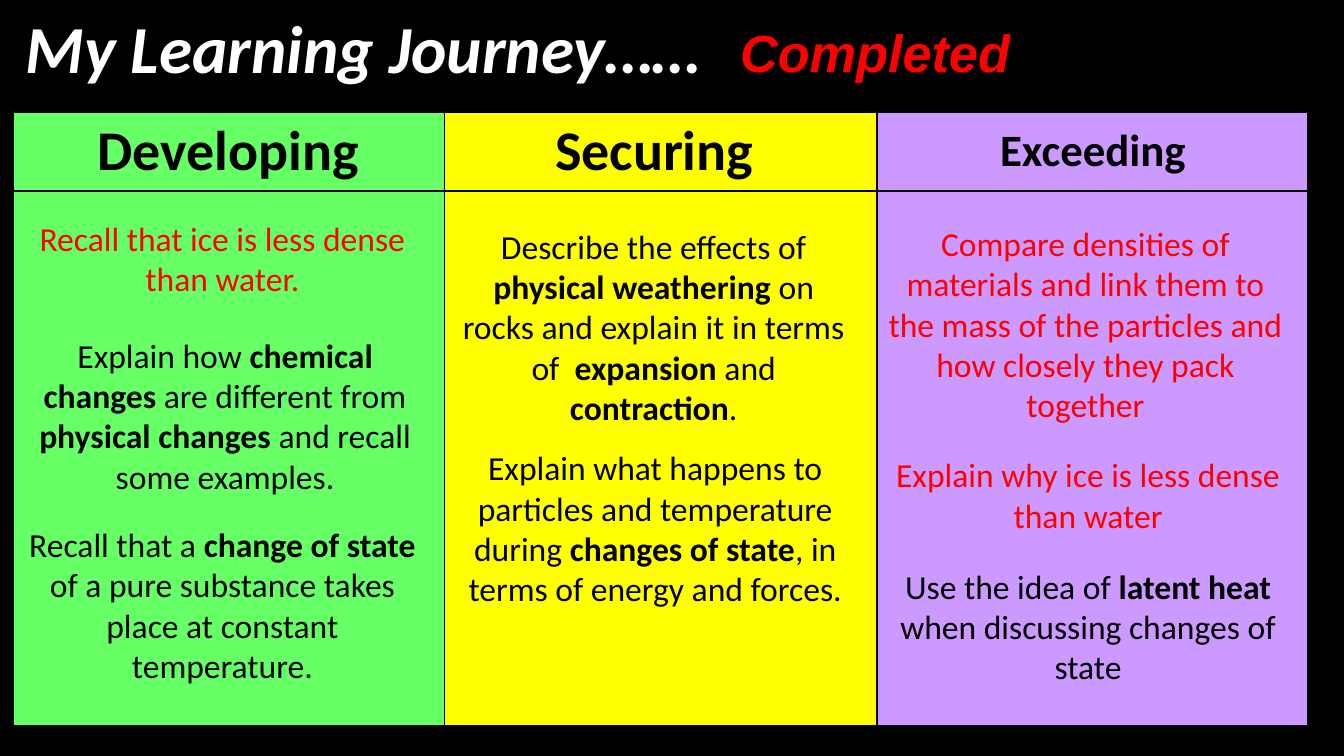
from lxml import etree
from pptx import Presentation
from pptx.dml.color import RGBColor
from pptx.enum import text
from pptx.oxml import ns
from pptx.util import Cm, Pt

BLACK, WHITE, RED = "000000", "FFFFFF", "FF0000"
BODY_FONT = "Calibri"

# Odd-numbered pieces of each goal are bold.
STAGES = [
    {"heading": "Developing", "size": 30, "fill": "66FF66", "goals": [
        (0.23, 3.99, 1.8, RED, ["Recall that ice is less dense than water."]),
        (0.28, 6.2, 3.33, BLACK, ["Explain how ", "chemical changes ", "are different from ",
                                  "physical changes", " and recall some examples."]),
        (0.23, 9.78, 3.33, BLACK, ["Recall that a ", "change of state ",
                                   "of a pure substance takes place at constant temperature."]),
    ]},
    {"heading": "Securing ", "size": 30, "fill": "FFFF00", "goals": [
        (8.38, 4.14, 4.11, BLACK, ["Describe the effects of ", "physical weathering ",
                                   "on rocks and explain it in terms of  ", "expansion",
                                   " and ", "contraction", "."]),
        (8.41, 8.33, 3.33, BLACK, ["Explain what happens to particles and temperature during ",
                                   "changes of state", ", in terms of energy and forces."]),
    ]},
    {"heading": "Exceeding", "size": 24, "fill": "CC99FF", "goals": [
        (16.54, 4.09, 4.11, RED, ["Compare densities of materials and link them to the mass "
                                  "of the particles and how closely they pack together"]),
        (16.59, 8.46, 1.8, RED, ["Explain why ice is less dense than water"]),
        (16.59, 10.57, 2.57, BLACK, ["Use the idea of ", "latent heat ",
                                     "when discussing changes of state"]),
    ]},
]
ROW_HEIGHTS = [1.5, 10.13]
COLUMN_WIDTH = 8.17
GOAL_WIDTH = 7.95
OUTER_LINE, INNER_LINE = 2.25, 1


def colour(value):
    return RGBColor.from_string(value)


def add_run(paragraph, words, size, shade, bold=False, italic=False, font=BODY_FONT):
    run = paragraph.add_run()
    run.text = words
    run.font.name = font
    run.font.size = Pt(size)
    run.font.bold = bold
    run.font.italic = italic
    run.font.color.rgb = colour(shade)


def add_box(left, top, width, height):
    frame = slide.shapes.add_textbox(Cm(left), Cm(top), Cm(width), Cm(height)).text_frame
    frame.word_wrap = True
    return frame.paragraphs[0]


def add_border(cell, side, points):
    properties = cell._tc.get_or_add_tcPr()
    line = etree.SubElement(properties, ns.qn(f"a:ln{side}"), w=str(Pt(points)))
    fill = etree.SubElement(line, ns.qn("a:solidFill"))
    etree.SubElement(fill, ns.qn("a:srgbClr"), val=BLACK)


deck = Presentation()
deck.slide_width, deck.slide_height = Cm(25.4), Cm(14.29)
slide = deck.slides.add_slide(deck.slide_layouts[6])
slide.background.fill.solid()
slide.background.fill.fore_color.rgb = colour(BLACK)

title = add_box(0.23, 0, 18.24, 3.58)
add_run(title, "My Learning Journey……", 36, WHITE, bold=True, italic=True)

rows, columns = len(ROW_HEIGHTS), len(STAGES)
journey = slide.shapes.add_table(rows, columns, Cm(0.23), Cm(2.11),
                                 Cm(COLUMN_WIDTH * columns), Cm(sum(ROW_HEIGHTS))).table
journey.first_row = journey.horz_banding = False
for row, height in zip(journey.rows, ROW_HEIGHTS):
    row.height = Cm(height)

for c, stage in enumerate(STAGES):
    journey.columns[c].width = Cm(COLUMN_WIDTH)
    for r in range(rows):
        cell = journey.cell(r, c)
        edges = {"L": c == 0, "R": c == columns - 1, "T": r == 0, "B": r == rows - 1}
        for side, outer in edges.items():
            add_border(cell, side, OUTER_LINE if outer else INNER_LINE)
        cell.fill.solid()
        cell.fill.fore_color.rgb = colour(stage["fill"])
    heading = journey.cell(0, c)
    heading.vertical_anchor = text.MSO_ANCHOR.MIDDLE
    heading.margin_left = heading.margin_right = Cm(0.18)
    heading.margin_top = heading.margin_bottom = Cm(0.1)
    paragraph = heading.text_frame.paragraphs[0]
    paragraph.alignment = text.PP_ALIGN.CENTER
    add_run(paragraph, stage["heading"], stage["size"], BLACK, bold=True)

for stage in STAGES:
    for left, top, height, shade, pieces in stage["goals"]:
        goal = add_box(left, top, GOAL_WIDTH, height)
        goal.alignment = text.PP_ALIGN.CENTER
        for i, piece in enumerate(pieces):
            add_run(goal, piece, 18, shade, bold=i % 2 == 1)

completed = add_box(13.74, 0.25, 6.93, 1.45)
add_run(completed, "Completed", 28, RED, bold=True, italic=True, font="Arial")

deck.save("out.pptx")
